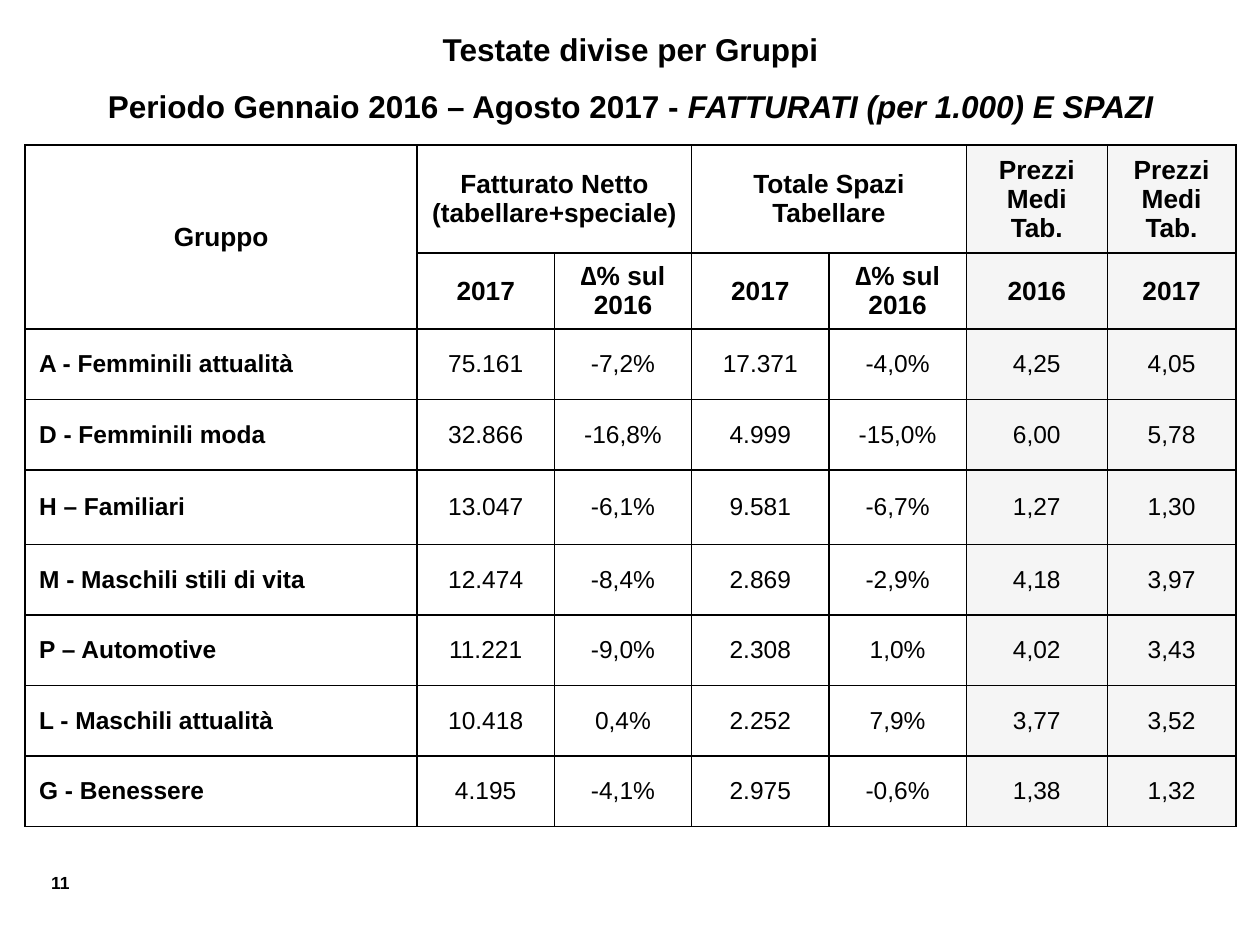
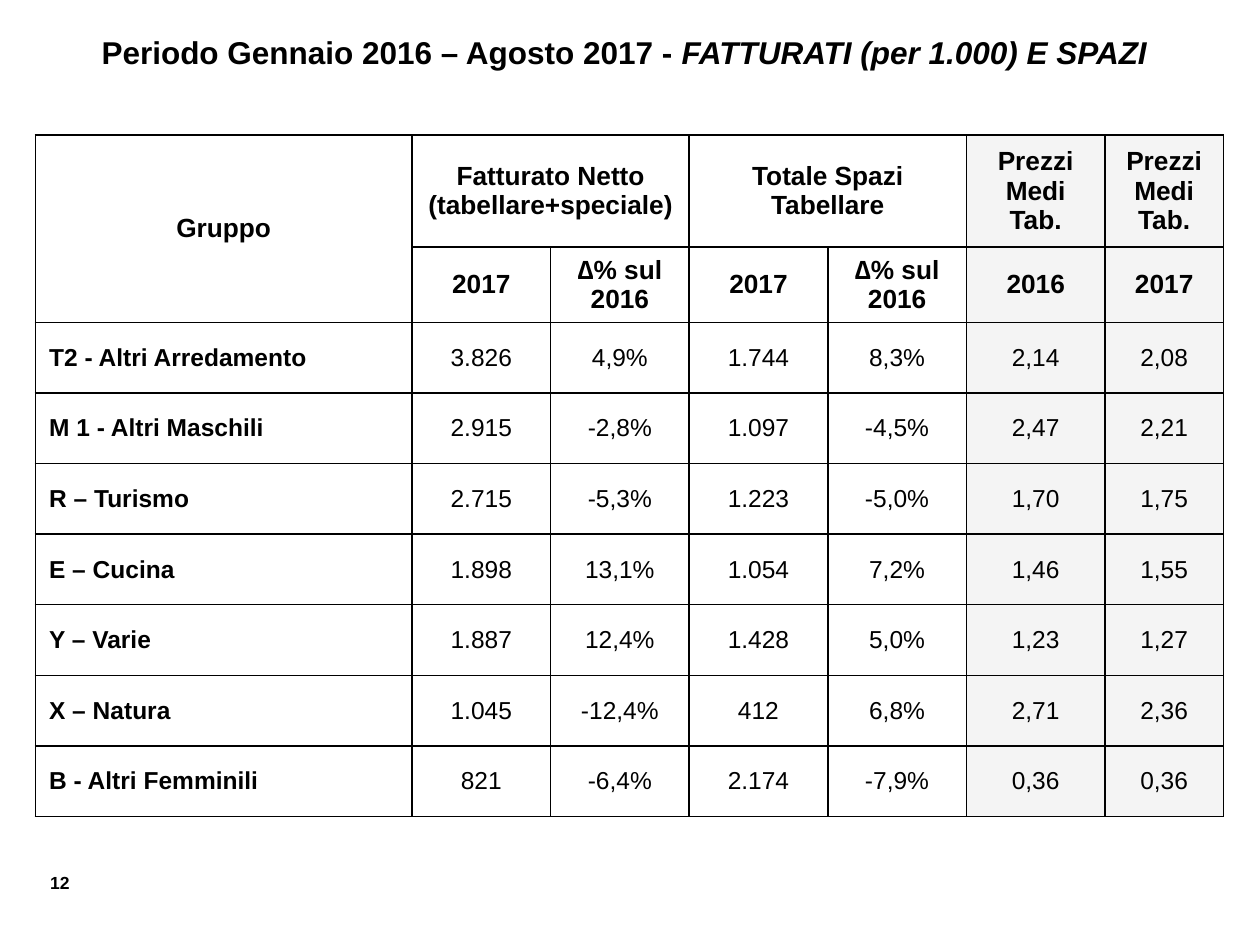
from dataclasses import dataclass

from lxml import etree
from pptx import Presentation
from pptx import util as u
from pptx.dml.color import RGBColor
from pptx.enum import text
from pptx.oxml.ns import qn

COLORS = {"ink": "000000", "price": "F2F2F2"}
FONT = "Arial"
CENTER, LEFT, RIGHT = text.PP_ALIGN.CENTER, text.PP_ALIGN.LEFT, text.PP_ALIGN.RIGHT

HEADING = "Testate divise per Gruppi"
PERIOD = "Periodo Gennaio 2016 – Agosto 2017 - "
SUBJECT = "FATTURATI (per 1.000) E SPAZI"

HEADER_ROWS = [
    ["Gruppo", "Fatturato Netto (tabellare+speciale)", "",
     "Totale Spazi Tabellare", "", "Prezzi Medi Tab.", "Prezzi Medi Tab."],
    ["", "2017", "∆% sul 2016", "2017", "∆% sul 2016", "2016", "2017"],
]
MERGES = [((0, 0), (1, 0)), ((0, 1), (0, 2)), ((0, 3), (0, 4))]
FIRST_PRICE_COLUMN = 5


@dataclass
class GroupPage:
    number: int
    title_at: tuple[float, float, float, float]
    has_heading: bool
    table_at: tuple[float, float]
    columns: list[float]
    rows: list[float]
    price_opacity: int
    groups: list[list[str]]


PAGES = [
    GroupPage(
        11, (0.2, 0.19, 9.61, 0.9), True, (0.2, 1.15),
        [3.11, 1.09, 1.09, 1.09, 1.09, 1.12, 1.02],
        [0.86, 0.6, 0.56, 0.56, 0.59] + [0.56] * 4, 70,
        [
            ["A - Femminili attualità", "75.161", "-7,2%", "17.371", "-4,0%", "4,25", "4,05"],
            ["D - Femminili moda", "32.866", "-16,8%", "4.999", "-15,0%", "6,00", "5,78"],
            ["H – Familiari", "13.047", "-6,1%", "9.581", "-6,7%", "1,27", "1,30"],
            ["M - Maschili stili di vita", "12.474", "-8,4%", "2.869", "-2,9%", "4,18", "3,97"],
            ["P – Automotive", "11.221", "-9,0%", "2.308", "1,0%", "4,02", "3,43"],
            ["L - Maschili attualità", "10.418", "0,4%", "2.252", "7,9%", "3,77", "3,52"],
            ["G - Benessere", "4.195", "-4,1%", "2.975", "-0,6%", "1,38", "1,32"],
        ],
    ),
    GroupPage(
        12, (0.27, 0.21, 9.37, 0.71), False, (0.28, 1.07),
        [2.99] + [1.1] * 5 + [0.94],
        [0.89, 0.6] + [0.56] * 7, 80,
        [
            ["T2 - Altri Arredamento", "3.826", "4,9%", "1.744", "8,3%", "2,14", "2,08"],
            ["M 1 - Altri Maschili", "2.915", "-2,8%", "1.097", "-4,5%", "2,47", "2,21"],
            ["R – Turismo", "2.715", "-5,3%", "1.223", "-5,0%", "1,70", "1,75"],
            ["E – Cucina", "1.898", "13,1%", "1.054", "7,2%", "1,46", "1,55"],
            ["Y – Varie", "1.887", "12,4%", "1.428", "5,0%", "1,23", "1,27"],
            ["X – Natura", "1.045", "-12,4%", "412", "6,8%", "2,71", "2,36"],
            ["B - Altri Femminili", "821", "-6,4%", "2.174", "-7,9%", "0,36", "0,36"],
        ],
    ),
]


def write(para, words: str, *, size: float, bold: bool = True,
          italic: bool = False, align=CENTER) -> None:
    """Add a formatted span to a paragraph."""
    para.alignment = align
    span = para.add_run()
    span.text = words
    span.font.name = FONT
    span.font.size = u.Pt(size)
    span.font.bold = bold
    span.font.italic = italic
    span.font.color.rgb = RGBColor.from_string(COLORS["ink"])


def add_frame(page, at: tuple[float, float, float, float]):
    box = page.shapes.add_textbox(*map(u.Inches, at))
    box.text_frame.word_wrap = True
    return box.text_frame


def add_title(page, content: GroupPage) -> None:
    frame = add_frame(page, content.title_at)
    para = frame.paragraphs[0]
    if content.has_heading:
        write(para, HEADING, size=18)
        para = frame.add_paragraph()
        para.space_before = u.Pt(11)
    write(para, PERIOD, size=18)
    write(para, SUBJECT, size=18, italic=True)


def add_page_number(page, number: int) -> None:
    frame = add_frame(page, (0.19, 6.87, 0.46, 0.27))
    write(frame.paragraphs[0], str(number), size=10, align=RIGHT)


def set_borders(cell) -> None:
    properties = cell._tc.get_or_add_tcPr()
    for side in ("a:lnL", "a:lnR", "a:lnT", "a:lnB"):
        line = etree.SubElement(properties, qn(side), w=str(u.Pt(1)))
        fill = etree.SubElement(line, qn("a:solidFill"))
        etree.SubElement(fill, qn("a:srgbClr"), val=COLORS["ink"])


def shade(cell, opacity: int) -> None:
    cell.fill.solid()
    cell.fill.fore_color.rgb = RGBColor.from_string(COLORS["price"])
    color = cell._tc.tcPr.find(qn("a:solidFill")).find(qn("a:srgbClr"))
    etree.SubElement(color, qn("a:alpha"), val=str(opacity * 1000))


def fill_cell(cell, words: str, row: int, column: int, opacity: int) -> None:
    is_header = row < len(HEADER_ROWS)
    is_name = not is_header and column == 0
    side, edge = (0.1, 0.05) if is_header else (0, 0)
    cell.margin_left = u.Inches(0.11 if is_name else side)
    cell.margin_right = u.Inches(side)
    cell.margin_top = cell.margin_bottom = u.Inches(edge)
    cell.vertical_anchor = text.MSO_ANCHOR.MIDDLE
    set_borders(cell)
    if column >= FIRST_PRICE_COLUMN:
        shade(cell, opacity)
    else:
        cell.fill.background()
    if words:
        write(cell.text_frame.paragraphs[0], words, size=15 if is_header else 14,
              bold=is_header or is_name, align=LEFT if is_name else CENTER)


def add_group_table(page, content: GroupPage) -> None:
    values = HEADER_ROWS + content.groups
    size = sum(content.columns), sum(content.rows)
    table = page.shapes.add_table(len(values), len(content.columns),
                                  *map(u.Inches, content.table_at + size)).table
    table.first_row = table.horz_banding = False
    for column, width in zip(table.columns, content.columns):
        column.width = u.Inches(width)
    for row, height in zip(table.rows, content.rows):
        row.height = u.Inches(height)
    for start, end in MERGES:
        table.cell(*start).merge(table.cell(*end))
    for row, line in enumerate(values):
        for column, words in enumerate(line):
            fill_cell(table.cell(row, column), words, row, column, content.price_opacity)


def main() -> None:
    deck = Presentation()
    deck.slide_width, deck.slide_height = u.Inches(10), u.Inches(7.5)
    for content in PAGES:
        page = deck.slides.add_slide(deck.slide_layouts[6])
        add_page_number(page, content.number)
        add_title(page, content)
        add_group_table(page, content)
    deck.save("out.pptx")


if __name__ == "__main__":
    main()
